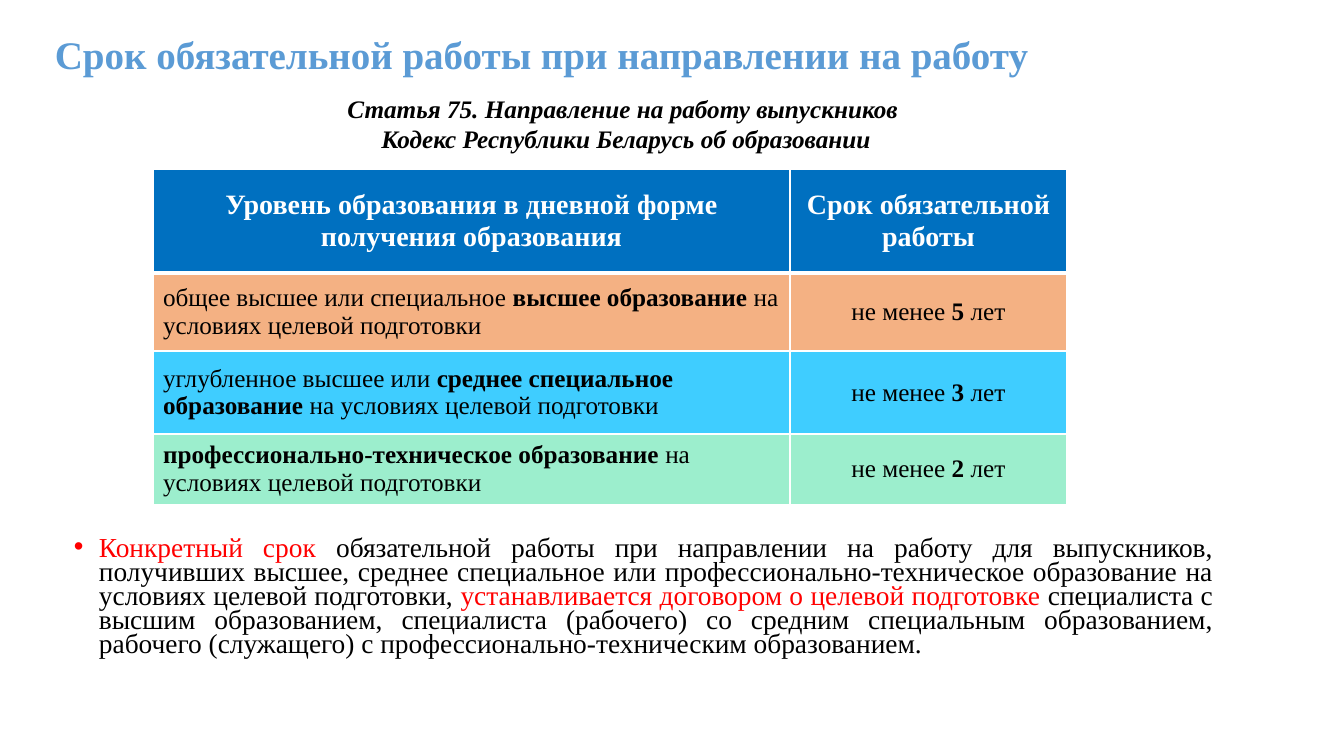
from lxml.etree import SubElement
from pptx import Presentation
from pptx.dml.color import RGBColor
from pptx.enum.text import MSO_ANCHOR as Anchor, PP_ALIGN as Align
from pptx.oxml.ns import qn
from pptx.util import Emu, Pt

FONT = "Times New Roman"
BLACK, WHITE, RED, BLUE = "000000", "FFFFFF", "FF0000", "5B9BD5"
HEAD = ["Уровень образования в дневной форме получения образования",
        "Срок обязательной работы"]
# Fill, height, level as (text, bold) parts, years of work
ROWS = [
    ("F4B183", 78, [("общее высшее или специальное ", False),
                    ("высшее образование ", True),
                    ("на условиях целевой подготовки", False)], "5"),
    ("3FCDFF", 83, [("углубленное высшее или ", False),
                    ("среднее специальное образование ", True),
                    ("на условиях целевой подготовки", False)], "3"),
    ("9CEECD", 70, [("профессионально-техническое образование ", True),
                    ("на условиях целевой подготовки", False)], "2"),
]
TERMS = [
    ("Конкретный срок ", RED),
    ("обязательной работы при направлении на работу для выпускников, "
     "получивших высшее, среднее специальное или профессионально-техническое "
     "образование на условиях целевой подготовки, ", BLACK),
    ("устанавливается договором о целевой подготовке", RED),
    (" специалиста с высшим образованием, специалиста (рабочего) "
     "со средним специальным образованием, рабочего (служащего) "
     "с профессионально-техническим образованием.", BLACK),
]


def px(n):
    return Emu(round(n * 914400 / 100.8))


def rgb(code):
    return RGBColor.from_string(code)


def write(para, text, size, color=BLACK, bold=False, italic=False):
    run = para.add_run()
    run.text = text
    font = run.font
    font.name, font.size = FONT, Pt(size)
    font.bold, font.italic = bold, italic
    font.color.rgb = rgb(color)


def frame(slide, box, anchor=Anchor.TOP):
    text = slide.shapes.add_textbox(*map(px, box)).text_frame
    text.word_wrap = True
    text.vertical_anchor = anchor
    return text


def title(slide, box):
    para = frame(slide, box, Anchor.MIDDLE).paragraphs[0]
    para.line_spacing = 0.9
    write(para, "Срок обязательной работы при направлении на работу", 27.9, BLUE, True)


def source(slide, box):
    text = frame(slide, box)
    lines = ["Статья 75. Направление на работу выпускников ",
             "Кодекс Республики Беларусь об образовании"]
    for i, line in enumerate(lines):
        para = text.add_paragraph() if i else text.paragraphs[0]
        para.alignment = Align.CENTER
        write(para, line, 18, bold=True, italic=True)


def border(cell, side, width):
    line = SubElement(cell._tc.get_or_add_tcPr(), qn("a:" + side), w=str(Pt(width)))
    fill = SubElement(line, qn("a:solidFill"))
    SubElement(fill, qn("a:srgbClr"), val=WHITE)


def fill_cell(cell, parts, size, color, fill, align, top, bottom):
    cell.vertical_anchor = Anchor.MIDDLE
    para = cell.text_frame.paragraphs[0]
    para.alignment = align
    for text, bold in parts:
        write(para, text, size, color, bold)
    # Borders precede the fill in the cell's XML
    for side, width in (("lnL", 1), ("lnR", 1), ("lnT", top), ("lnB", bottom)):
        border(cell, side, width)
    cell.fill.solid()
    cell.fill.fore_color.rgb = rgb(fill)


def terms_table(slide, box):
    grid = slide.shapes.add_table(len(ROWS) + 1, 2, *map(px, box)).table
    for col, width in zip(grid.columns, (637, box[2] - 637)):
        col.width = px(width)
    # Header
    grid.rows[0].height = px(104)
    for i, text in enumerate(HEAD):
        fill_cell(grid.cell(0, i), [(text, True)], 20, WHITE, "0070C0",
                  Align.CENTER, 1, 3)
    # Levels of education
    for i, (fill, height, level, years) in enumerate(ROWS, 1):
        grid.rows[i].height = px(height)
        term = [("не менее ", False), (years, True), (" лет", False)]
        top = 3 if i == 1 else 1
        for j, (parts, align) in enumerate(((level, Align.LEFT), (term, Align.CENTER))):
            fill_cell(grid.cell(i, j), parts, 18, BLACK, fill, align, top, 1)


def note(slide, box):
    para = frame(slide, box).paragraphs[0]
    para.alignment = Align.JUSTIFY
    para.line_spacing = 0.73
    para.space_before = Pt(10)
    # Bullet with a hanging indent
    props = para._p.get_or_add_pPr()
    props.set("marL", str(px(25)))
    props.set("indent", str(-px(25)))
    SubElement(props, qn("a:buFont"), typeface="Arial")
    SubElement(props, qn("a:buChar"), char="•")
    for text, color in TERMS:
        write(para, text, 19.6, color)


def main():
    deck = Presentation()
    deck.slide_width, deck.slide_height = px(1344), px(756)
    slide = deck.slides.add_slide(deck.slide_layouts[6])
    title(slide, (45, 32, 1185, 50))
    source(slide, (290, 88, 672, 71))
    terms_table(slide, (153, 169, 914, 335))
    note(slide, (64, 533, 1159, 143))
    deck.save("out.pptx")


if __name__ == "__main__":
    main()
